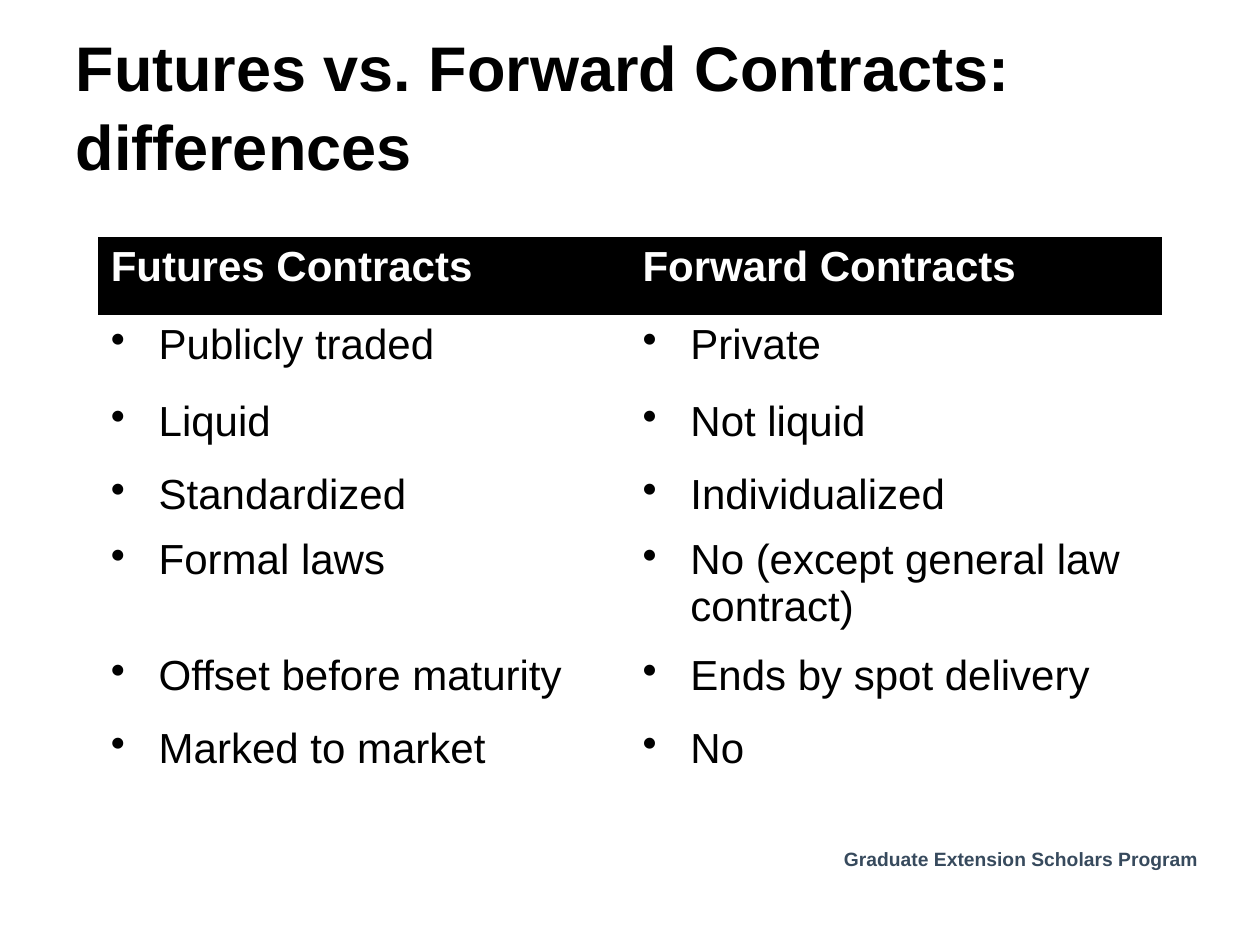
import dataclasses

import lxml.etree
import pptx
import pptx.dml.color
import pptx.enum.text
import pptx.oxml.ns
import pptx.util


@dataclasses.dataclass(frozen=True)
class Theme:
    font: str = "Arial"
    ink: str = "000000"
    paper: str = "FFFFFF"
    slate: str = "374A5D"
    title_size: int = 36
    table_size: int = 24
    footer_size: int = 11
    plain_table: str = "{2D5ABB26-0587-4C30-8999-92F81FD0307C}"


class ContractSlide:
    """Hold the theme and the current page, and add each kind of element."""

    def __init__(self, deck, theme):
        self.deck = deck
        self.theme = theme
        self.page = deck.slides.add_slide(deck.slide_layouts[5])

    def place(self, left, top, width, height):
        across, down = self.deck.slide_width, self.deck.slide_height
        return [int(share * side) for share, side in
                zip((left, top, width, height), (across, down, across, down))]

    def set_text(self, frame, text, size, colour, bold=False, bullet=False):
        para = frame.paragraphs[0]
        para.alignment = pptx.enum.text.PP_ALIGN.LEFT
        span = para.add_run()
        span.text = text
        if bullet:
            indent = pptx.util.Inches(0.38)
            settings = para._p.get_or_add_pPr()
            settings.set("marL", str(indent))
            settings.set("indent", str(-indent))
            mark = lxml.etree.SubElement(settings, pptx.oxml.ns.qn("a:buChar"))
            mark.set("char", "•")
        formats = {"name": self.theme.font, "size": pptx.util.Pt(size), "bold": bold}
        for name, value in formats.items():
            setattr(span.font, name, value)
        span.font.color.rgb = pptx.dml.color.RGBColor.from_string(colour)
        return para

    def title(self, text, *shares):
        box = self.page.shapes.title
        for name, value in zip(("left", "top", "width", "height"), self.place(*shares)):
            setattr(box, name, value)
        frame = box.text_frame
        formats = {"word_wrap": True,
                   "auto_size": pptx.enum.text.MSO_AUTO_SIZE.NONE,
                   "vertical_anchor": pptx.enum.text.MSO_ANCHOR.MIDDLE}
        for name, value in formats.items():
            setattr(frame, name, value)
        para = self.set_text(frame, text, self.theme.title_size, self.theme.ink, bold=True)
        para.line_spacing = 1.05

    def footer(self, text, *shares):
        frame = self.page.shapes.add_textbox(*self.place(*shares)).text_frame
        frame.word_wrap = True
        self.set_text(frame, text, self.theme.footer_size, self.theme.slate, bold=True)

    def table(self, rows, heights, *shares):
        shape = self.page.shapes.add_table(len(rows), len(rows[0]), *self.place(*shares))
        table = shape.table
        table._tbl.tblPr.find(pptx.oxml.ns.qn("a:tableStyleId")).text = self.theme.plain_table
        for row, height in zip(table.rows, heights):
            row.height = int(height * self.deck.slide_height)
        for index, texts in enumerate(rows):
            header = index == 0
            for cell, text in zip(table.rows[index].cells, texts):
                if header:
                    cell.fill.solid()
                    cell.fill.fore_color.rgb = pptx.dml.color.RGBColor.from_string(self.theme.ink)
                else:
                    cell.fill.background()
                colour = self.theme.paper if header else self.theme.ink
                self.set_text(cell.text_frame, text, self.theme.table_size, colour,
                              bold=header, bullet=not header)


def main():
    deck = pptx.Presentation()
    deck.slide_width = pptx.util.Inches(10)
    deck.slide_height = pptx.util.Inches(7.5)
    slide = ContractSlide(deck, Theme())
    slide.footer("Graduate Extension Scholars Program", 0.66, 0.89, 0.31, 0.04)
    slide.title("Futures vs. Forward Contracts: differences", 0.05, 0.04, 0.92, 0.14)
    contracts = [
        ("Futures Contracts", "Forward Contracts"),
        ("Publicly traded", "Private"),
        ("Liquid", "Not liquid"),
        ("Standardized", "Individualized"),
        ("Formal laws", "No (except general law contract)"),
        ("Offset before maturity", "Ends by spot delivery"),
        ("Marked to market", "No"),
    ]
    heights = [inches / 7.5 for inches in (0.62, 0.61, 0.58, 0.52, 0.92, 0.58, 0.71)]
    margin = 0.78 / 10
    slide.table(contracts, heights, margin, 1.88 / 7.5, 1 - 2 * margin, sum(heights))
    deck.save("out.pptx")


if __name__ == "__main__":
    main()
